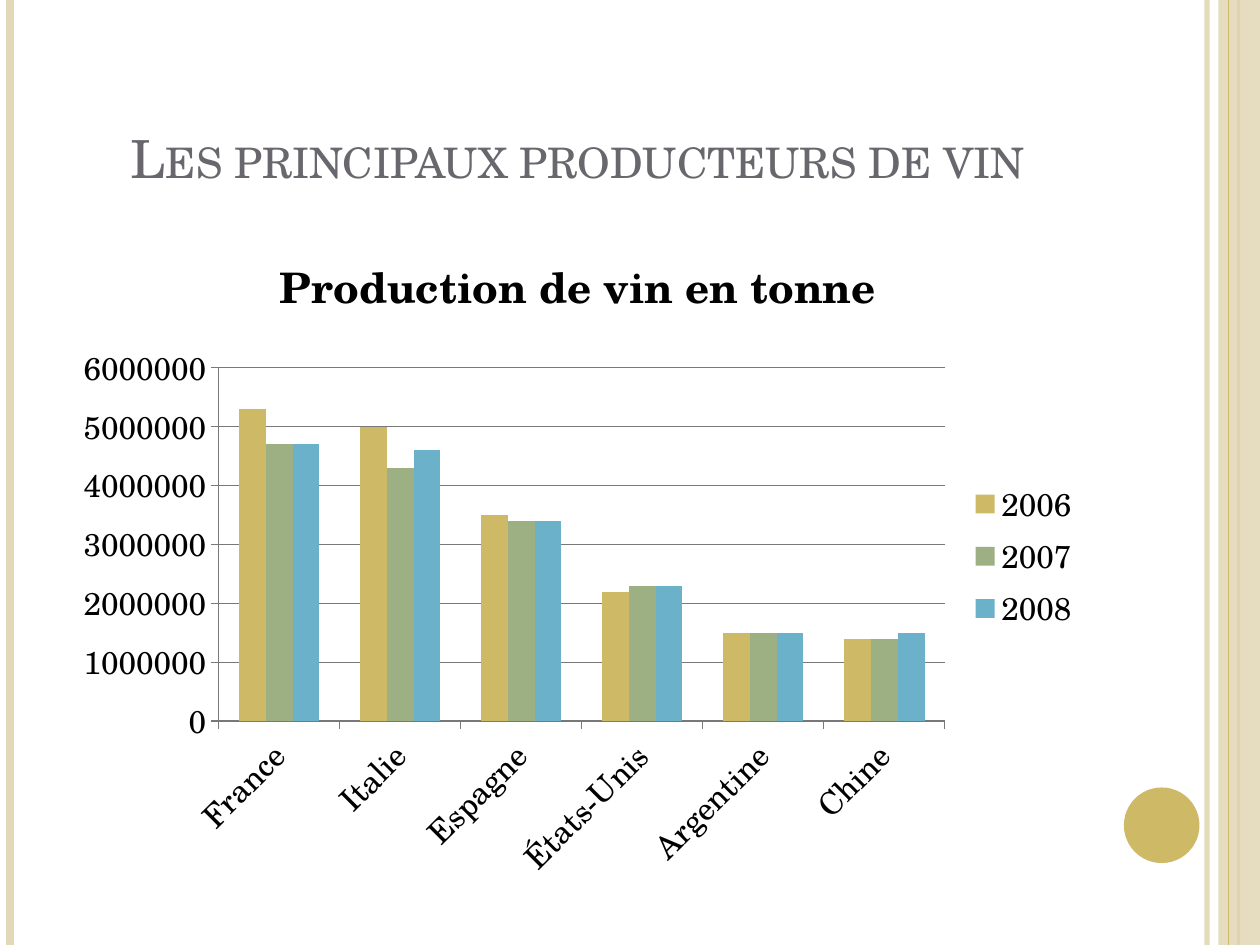
from lxml.etree import SubElement
from pptx import Presentation
from pptx.chart.data import CategoryChartData
from pptx.dml.color import RGBColor
from pptx.enum.chart import XL_CHART_TYPE, XL_LEGEND_POSITION, XL_TICK_MARK
from pptx.enum.shapes import MSO_CONNECTOR, MSO_SHAPE
from pptx.enum.text import MSO_ANCHOR, PP_ALIGN
from pptx.oxml.ns import qn
from pptx.util import Inches, Pt

FONT = "TeX Gyre Schola"
GOLD = RGBColor(0xCE, 0xB9, 0x66)
GREEN = RGBColor(0x9C, 0xB0, 0x84)
BLUE = RGBColor(0x6B, 0xB1, 0xC9)
SAND = RGBColor(0xE3, 0xD9, 0xB8)
GREY = RGBColor(0x69, 0x67, 0x6D)
AXIS = RGBColor(0x78, 0x78, 0x78)
BLACK = RGBColor(0, 0, 0)

WIDTH, HEIGHT = 10, 7.5
TITLE = "Les principaux producteurs de vin"
CHART_TITLE = "Production de vin en tonne"
COUNTRIES = ["France", "Italie", "Espagne", "États-Unis", "Argentine", "Chine"]
SERIES = [
    ("2006", GOLD, [5300000, 5000000, 3500000, 2200000, 1500000, 1400000]),
    ("2007", GREEN, [4700000, 4300000, 3400000, 2300000, 1500000, 1400000]),
    ("2008", BLUE, [4700000, 4600000, 3400000, 2300000, 1500000, 1500000]),
]
BACK_RULES = [(9.58, SAND, 3, 93), (0.08, SAND, 4.5, 100), (9.83, GOLD, 1.5, 100)]
FRONT_RULES = [(9.75, GOLD, 0.75, 100)]


def set_opacity(shape, percent):
    color = next(shape._element.spPr.iter(qn("a:srgbClr")))
    SubElement(color, qn("a:alpha")).set("val", str(percent * 1000))


def add_rule(page, x, color, weight, opacity):
    rule = page.shapes.add_connector(
        MSO_CONNECTOR.STRAIGHT, Inches(x), 0, Inches(x), Inches(HEIGHT))
    rule.line.color.rgb = color
    rule.line.width = Pt(weight)
    if opacity < 100:
        set_opacity(rule, opacity)
    SubElement(rule._element.spPr, qn("a:effectLst"))


def add_plain_shape(page, kind, left, top, width, height, color):
    shape = page.shapes.add_shape(
        kind, Inches(left), Inches(top), Inches(width), Inches(height))
    shape.shadow.inherit = False
    shape.fill.solid()
    shape.fill.fore_color.rgb = color
    shape.line.fill.background()
    return shape


def write_text(frame, text, size, color, bold=False, small_caps=False):
    para = frame.paragraphs[0]
    para.alignment = PP_ALIGN.CENTER
    span = para.add_run()
    span.text = text
    span.font.name = FONT
    span.font.size = Pt(size)
    span.font.bold = bold
    span.font.color.rgb = color
    if small_caps:
        span.font._element.set("cap", "small")


def add_frame(page):
    for rule in BACK_RULES:
        add_rule(page, *rule)
    band = add_plain_shape(page, MSO_SHAPE.RECTANGLE, 9.67, 0, 0.33, HEIGHT, SAND)
    set_opacity(band, 87)
    for rule in FRONT_RULES:
        add_rule(page, *rule)
    add_plain_shape(page, MSO_SHAPE.OVAL, 8.92, 6.25, 0.6, 0.6, GOLD)


def add_title(page):
    title = page.shapes.title
    title.left, title.top = Inches(0.5), Inches(0.3)
    title.width, title.height = Inches(8.17), Inches(1.25)
    title.text_frame.word_wrap = True
    title.text_frame.vertical_anchor = MSO_ANCHOR.BOTTOM
    write_text(title.text_frame, TITLE, 30, GREY, small_caps=True)


def add_production_chart(page):
    data = CategoryChartData(number_format="General")
    data.categories = COUNTRIES
    for name, _, values in SERIES:
        data.add_series(name, values)
    chart = page.shapes.add_chart(
        XL_CHART_TYPE.COLUMN_CLUSTERED, Inches(0.5), Inches(1.75),
        Inches(8.17), Inches(5.33), data).chart
    chart.font.name = FONT
    chart.font.size = Pt(18)
    chart.font.color.rgb = BLACK
    chart.has_title = True
    write_text(chart.chart_title.text_frame, CHART_TITLE, 24, BLACK, bold=True)
    chart.chart_title.include_in_layout = False
    chart.has_legend = True
    chart.legend.position = XL_LEGEND_POSITION.RIGHT
    chart.legend.include_in_layout = False

    plot = chart.plots[0]
    plot.gap_width = 150
    plot.overlap = 0
    plot.vary_by_categories = False
    for series, (_, color, _) in zip(plot.series, SERIES):
        series.format.fill.solid()
        series.format.fill.fore_color.rgb = color

    for axis in (chart.category_axis, chart.value_axis):
        axis.major_tick_mark = XL_TICK_MARK.OUTSIDE
        axis.format.line.color.rgb = AXIS
        axis.format.line.width = Pt(0.75)
        axis.tick_labels.font.size = Pt(18)
    labels = chart.category_axis._element.find(qn("c:txPr"))
    labels.find(qn("a:bodyPr")).set("rot", "-2700000")
    values = chart.value_axis
    values.minimum_scale, values.maximum_scale = 0, 6000000
    values.major_unit = 1000000
    values.has_major_gridlines = True
    values.major_gridlines.format.line.color.rgb = AXIS
    values.major_gridlines.format.line.width = Pt(0.75)


def main():
    deck = Presentation()
    deck.slide_width, deck.slide_height = Inches(WIDTH), Inches(HEIGHT)
    page = deck.slides.add_slide(deck.slide_layouts[5])
    add_frame(page)
    add_title(page)
    add_production_chart(page)
    deck.save("out.pptx")


if __name__ == "__main__":
    main()
